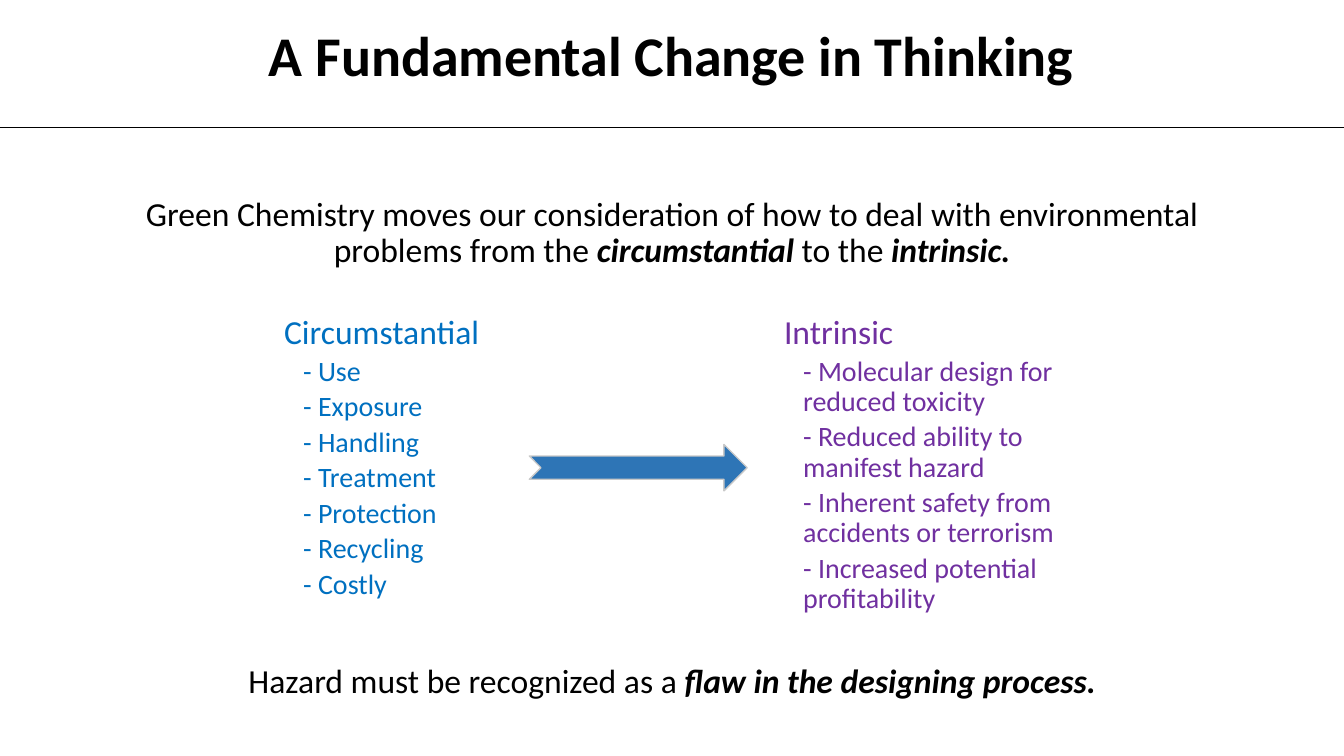
from pptx import Presentation
from pptx.dml.color import RGBColor
from pptx.enum.shapes import MSO_CONNECTOR, MSO_SHAPE
from pptx.enum.text import MSO_ANCHOR, MSO_AUTO_SIZE, PP_ALIGN
from pptx.oxml.ns import qn
from pptx.util import Cm, Pt

LEFT, CENTER = PP_ALIGN.LEFT, PP_ALIGN.CENTER
TOP, MIDDLE = MSO_ANCHOR.TOP, MSO_ANCHOR.MIDDLE
NO_FIT = MSO_AUTO_SIZE.NONE
ARROW = MSO_SHAPE.NOTCHED_RIGHT_ARROW
STRAIGHT = MSO_CONNECTOR.STRAIGHT

FONT = "Calibri"
WIDTH, HEIGHT = Cm(33.87), Cm(19.05)
COLORS = {
    "text": "000000",
    "circum": "0070C0",
    "intrin": "7030A0",
    "arrow": "2E75B6",
    "edge": "C9C9C9",
}
CIRCUM = ["Use", "Exposure", "Handling", "Treatment", "Protection", "Recycling", "Costly"]
INTRIN = [
    "Molecular design for reduced toxicity",
    "Reduced ability to manifest hazard",
    "Inherent safety from accidents or terrorism",
    "Increased potential profitability",
]


def color(name):
    """Return the named colour."""
    return RGBColor.from_string(COLORS[name])


def place(shape, left, top, width, height, anchor=TOP):
    """Move a text shape, given in centimetres, and return its frame."""
    shape.left, shape.top = Cm(left), Cm(top)
    shape.width, shape.height = Cm(width), Cm(height)
    frame = shape.text_frame
    frame.word_wrap = True
    frame.auto_size = NO_FIT
    frame.vertical_anchor = anchor
    return frame


def write(para, *parts, size=24, tint="text", bold=False, align=LEFT,
          before=0, level=0, indent=0):
    """Fill a paragraph with parts, every second one in bold italics."""
    props = para._p.get_or_add_pPr()
    props.set("marL", str(Cm(indent)))
    props.set("indent", "0")
    props.get_or_change_to_buNone() if hasattr(props, "get_or_change_to_buNone") \
        else props.insert(0, props.makeelement(qn("a:buNone"), {}))
    para.level = level
    para.alignment = align
    para.line_spacing = 0.9
    para.space_before = Pt(before)
    for i, part in enumerate(parts):
        run = para.add_run()
        run.text = part
        font = run.font
        font.name, font.size = FONT, Pt(size)
        font.color.rgb = color(tint)
        strong = i % 2 == 1
        font.bold, font.italic = bold or strong, strong


def add_list(slide, left, width, head, items, tint):
    """Add a heading with dashed items below it."""
    box = slide.shapes.add_textbox(0, 0, 0, 0)
    frame = place(box, left, 7.82, width, 7.87)
    write(frame.paragraphs[0], head, tint=tint)
    for item in items:
        write(frame.add_paragraph(), f"- {item}", size=20, tint=tint,
              before=3.8, level=1, indent=0.48)


def add_arrow(slide):
    """Add the arrow between the two lists."""
    arrow = slide.shapes.add_shape(ARROW, Cm(13.34), Cm(11.2), Cm(5.49), Cm(1.17))
    arrow.shadow.inherit = False
    arrow.fill.solid()
    arrow.fill.fore_color.rgb = color("arrow")
    arrow.line.color.rgb = color("edge")
    arrow.line.width = Pt(1)


def add_rule(slide):
    """Add the thin line under the title."""
    rule = slide.shapes.add_connector(STRAIGHT, 0, Cm(3.2), WIDTH, Cm(3.2))
    rule.line.color.rgb = color("text")
    rule.line.width = Pt(0.5)
    props = rule._element.spPr
    props.append(props.makeelement(qn("a:effectLst"), {}))


def main():
    """Build and save the slide."""
    deck = Presentation()
    deck.slide_width, deck.slide_height = WIDTH, HEIGHT
    slide = deck.slides.add_slide(deck.slide_layouts[1])

    title = place(slide.shapes.title, 4.22, 0.58, 25.4, 1.8, anchor=MIDDLE)
    write(title.paragraphs[0], "A Fundamental Change in Thinking",
          size=40, bold=True, align=CENTER)

    body = place(slide.placeholders[1], 2.44, 4.85, 29, 13.08)
    write(body.paragraphs[0],
          "Green Chemistry moves our consideration of how to deal with "
          "environmental problems from the ",
          "circumstantial", " to the ", "intrinsic.", align=CENTER)
    write(body.add_paragraph(), "Hazard must be recognized as a",
          " flaw in the designing process.", align=CENTER, before=282)

    add_list(slide, 6.91, 7.98, "Circumstantial", CIRCUM, "circum")
    add_list(slide, 19.51, 8.43, "Intrinsic", INTRIN, "intrin")
    add_arrow(slide)
    add_rule(slide)
    deck.save("out.pptx")


if __name__ == "__main__":
    main()
